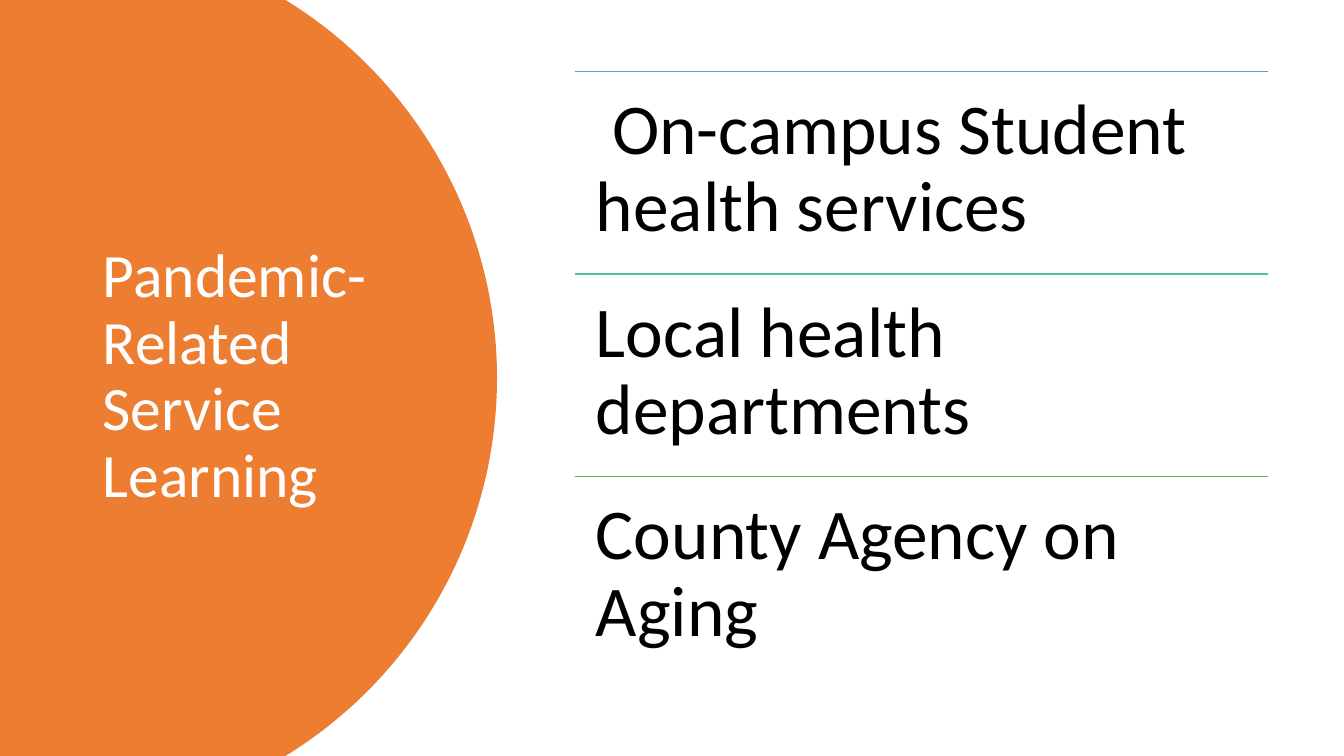
"""Build the slide on pandemic-related service learning."""
import math

from lxml import etree
from pptx import Presentation
from pptx.dml.color import RGBColor
from pptx.enum.shapes import MSO_CONNECTOR
from pptx.enum.text import MSO_ANCHOR
from pptx.oxml.ns import qn
from pptx.util import Pt

PX = 9144
STRAIGHT = MSO_CONNECTOR.STRAIGHT
TOP, MIDDLE = MSO_ANCHOR.TOP, MSO_ANCHOR.MIDDLE
WIDTH, HEIGHT = 1333, 750


def color(value):
    return RGBColor.from_string(value)


def add_text(left, top, width, height, text, size, fill, anchor, inset_x, inset_y):
    box = slide.shapes.add_textbox(left * PX, top * PX, width * PX, height * PX)
    frame = box.text_frame
    frame.word_wrap = True
    frame.vertical_anchor = anchor
    frame.margin_left = frame.margin_right = inset_x * PX
    frame.margin_top = frame.margin_bottom = inset_y * PX
    paragraph = frame.paragraphs[0]
    paragraph.text = text
    paragraph.line_spacing = 0.9
    paragraph.font.name = "Calibri"
    paragraph.font.size = Pt(size)
    paragraph.font.color.rgb = color(fill)


presentation = Presentation()
presentation.slide_width = WIDTH * PX
presentation.slide_height = HEIGHT * PX
slide = presentation.slides.add_slide(presentation.slide_layouts[6])

CENTER_X, RADIUS, STEPS = 53, 440, 120
half_angle = math.asin(HEIGHT / 2 / RADIUS)
angles = [half_angle * (2 * step / STEPS - 1) for step in range(STEPS + 1)]
arc = [
    (
        round((CENTER_X + RADIUS * math.cos(angle)) * PX),
        round((HEIGHT / 2 + RADIUS * math.sin(angle)) * PX),
    )
    for angle in angles
]
builder = slide.shapes.build_freeform(0, 0)
builder.add_line_segments(arc + [(0, HEIGHT * PX)], close=True)
panel = builder.convert_to_shape()
panel.shadow.inherit = False
panel.fill.solid()
panel.fill.fore_color.rgb = color("ED7D31")
panel.line.fill.background()

add_text(92, 70, 323, 609, "Pandemic-Related Service Learning", 44, "FFFFFF", MIDDLE, 10, 5)

LIST_LEFT, LIST_TOP, LIST_WIDTH, ROW_HEIGHT = 570, 71, 688, 201
places = [
    (" On-campus Student health services", "5B9BD5"),
    ("Local health departments", "4DC58D"),
    ("County Agency on Aging", "70AD47"),
]
for row, (place, line_color) in enumerate(places):
    top = LIST_TOP + row * ROW_HEIGHT
    rule = slide.shapes.add_connector(
        STRAIGHT, LIST_LEFT * PX, top * PX, (LIST_LEFT + LIST_WIDTH) * PX, top * PX
    )
    rule.line.color.rgb = color(line_color)
    rule.line.width = Pt(1)
    etree.SubElement(rule.element.spPr, qn("a:effectLst"))
    add_text(LIST_LEFT, top, LIST_WIDTH, ROW_HEIGHT, place, 51, "000000", TOP, 21, 21)

presentation.save("out.pptx")
